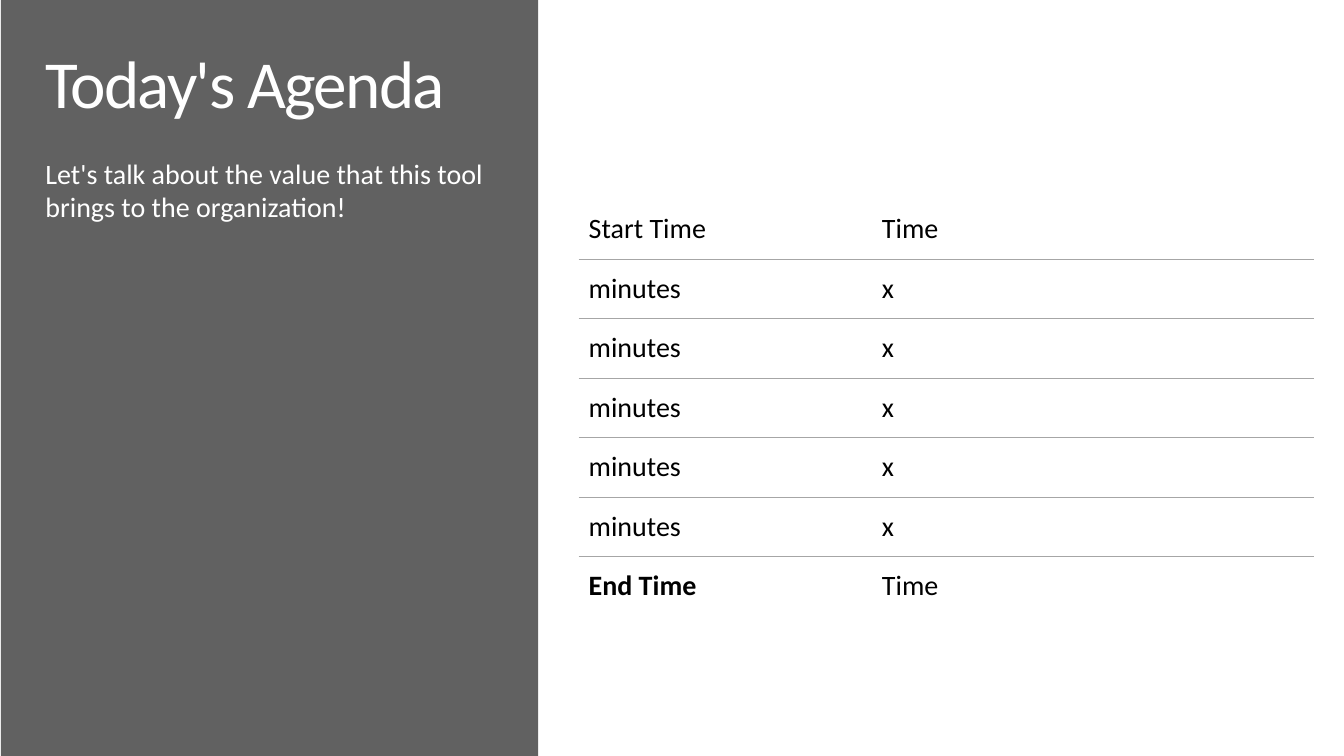
import dataclasses

import pptx
import pptx.dml.color
import pptx.enum.shapes
import pptx.enum.text
import pptx.oxml
import pptx.oxml.ns
import pptx.presentation
import pptx.shapes.autoshape
import pptx.slide
import pptx.table
import pptx.text.text
import pptx.util

Pt = pptx.util.Pt
RGB = pptx.dml.color.RGBColor

WHITE = RGB(0xFF, 0xFF, 0xFF)
BLACK = RGB(0x00, 0x00, 0x00)
GRAY = RGB(0x61, 0x61, 0x61)
RULE = RGB(0xA6, 0xA6, 0xA6)
FONT = "Calibri"
TITLE_ONLY = 5
ROW_HIGH = 42.5
COL_WIDE = (209.5, 315.5)


@dataclasses.dataclass(frozen=True)
class Box:
    left: float
    top: float
    width: float
    height: float

    def place(self) -> tuple[int, int, int, int]:
        return Pt(self.left), Pt(self.top), Pt(self.width), Pt(self.height)


@dataclasses.dataclass(frozen=True)
class Item:
    label: str
    value: str
    bold: bool = False


PANEL = Box(0.7, 0, 383.8, 540)
TITLE = Box(32.4, 37.4, 320.4, 54.7)
INTRO = Box(32.4, 108, 347, 80)
TABLE = Box(413.3, 142.6, sum(COL_WIDE), ROW_HIGH * 7)
AGENDA = [
    Item("Start Time", "Time"),
    *[Item("minutes", "x")] * 5,
    Item("End Time", "Time", bold=True),
]


def style(run: pptx.text.text._Run, size: float, color: RGB, bold: bool = False) -> None:
    run.font.name = FONT
    run.font.size = Pt(size)
    run.font.bold = bold
    run.font.color.rgb = color


def write(shape: pptx.shapes.autoshape.Shape, box: Box, text: str,
          size: float) -> pptx.text.text._Paragraph:
    """Place a shape and give it white, left-aligned text."""
    shape.left, shape.top, shape.width, shape.height = box.place()
    frame = shape.text_frame
    frame.text = text
    frame.word_wrap = True
    frame.auto_size = pptx.enum.text.MSO_AUTO_SIZE.SHAPE_TO_FIT_TEXT
    frame.vertical_anchor = pptx.enum.text.MSO_ANCHOR.TOP
    frame.margin_left = frame.margin_right = 0
    frame.margin_top = frame.margin_bottom = Pt(3.6)
    para = frame.paragraphs[0]
    para.alignment = pptx.enum.text.PP_ALIGN.LEFT
    style(para.runs[0], size, WHITE)
    return para


def border(cell: pptx.table._Cell, side: str, shown: bool) -> None:
    fill = f'<a:solidFill><a:srgbClr val="{RULE}"/></a:solidFill>' if shown else "<a:noFill/>"
    line = f'<a:ln{side} {pptx.oxml.ns.nsdecls("a")} w="{Pt(0.5)}">{fill}</a:ln{side}>'
    cell._tc.get_or_add_tcPr().append(pptx.oxml.parse_xml(line))


def add_panel(slide: pptx.slide.Slide) -> None:
    rect = pptx.enum.shapes.MSO_SHAPE.RECTANGLE
    panel = slide.shapes.add_shape(rect, *PANEL.place())
    panel.shadow.inherit = False
    panel.fill.solid()
    panel.fill.fore_color.rgb = GRAY
    panel.line.fill.background()
    slide.shapes.title.element.addprevious(panel.element)


def add_agenda(slide: pptx.slide.Slide) -> None:
    grid = slide.shapes.add_table(len(AGENDA), len(COL_WIDE), *TABLE.place()).table
    grid.first_row = grid.horz_banding = False
    for col, wide in zip(grid.columns, COL_WIDE):
        col.width = Pt(wide)
    last = len(AGENDA) - 1
    for at, (row, item) in enumerate(zip(grid.rows, AGENDA)):
        row.height = Pt(ROW_HIGH)
        texts = ((item.label, item.bold), (item.value, False))
        for cell, (text, bold) in zip(row.cells, texts):
            cell.text_frame.text = text
            cell.vertical_anchor = pptx.enum.text.MSO_ANCHOR.MIDDLE
            style(cell.text_frame.paragraphs[0].runs[0], 20, BLACK, bold)
            edges = {"L": False, "R": False, "T": at > 0, "B": at < last}
            for side, shown in edges.items():
                border(cell, side, shown)
            cell.fill.background()


def main() -> None:
    deck = pptx.Presentation()
    deck.slide_width, deck.slide_height = Pt(960), Pt(540)
    slide = deck.slides.add_slide(deck.slide_layouts[TITLE_ONLY])
    add_panel(slide)
    head = write(slide.shapes.title, TITLE, "Today's Agenda", 48)
    head.line_spacing = 0.8
    head.runs[0]._r.get_or_add_rPr().set("spc", "-120")
    write(slide.shapes.add_textbox(*INTRO.place()), INTRO,
          "Let's talk about the value that this tool brings to the organization!", 20)
    add_agenda(slide)
    deck.save("out.pptx")


if __name__ == "__main__":
    main()
